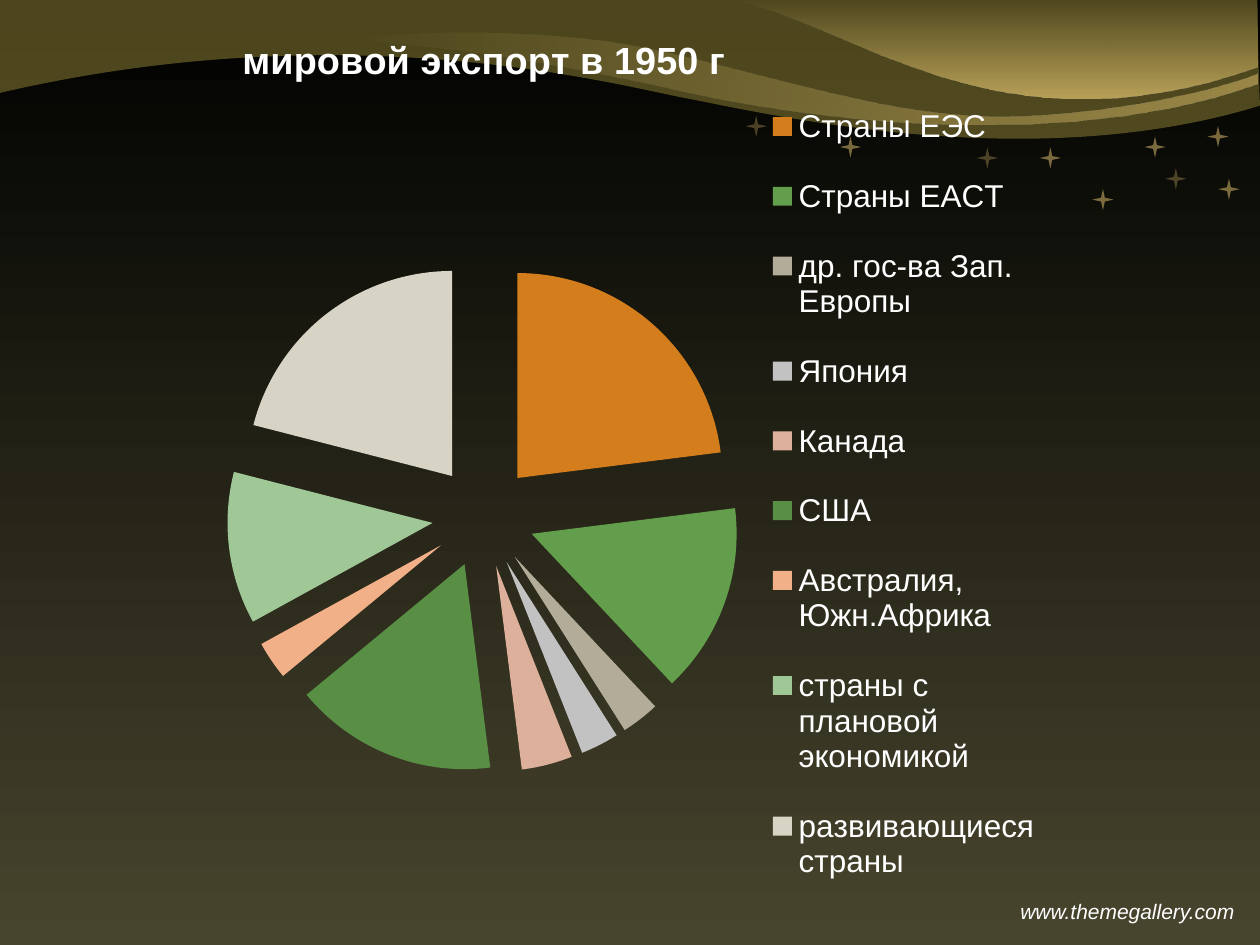
from lxml import etree
from pptx import Presentation
from pptx.chart.data import CategoryChartData
from pptx.dml.color import RGBColor
from pptx.enum.chart import XL_CHART_TYPE, XL_LEGEND_POSITION
from pptx.enum.shapes import MSO_SHAPE
from pptx.enum.text import MSO_AUTO_SIZE
from pptx.oxml.ns import qn
from pptx.util import Cm, Pt

PIE = XL_CHART_TYPE.PIE
RIGHT = XL_LEGEND_POSITION.RIGHT
STAR = MSO_SHAPE.STAR_4_POINT
GROW = MSO_AUTO_SIZE.SHAPE_TO_FIT_TEXT

GOLD = "E8C972"
WHITE = "FFFFFF"
FONT = "Arial"
TITLE = "мировой экспорт в 1950 г"
PARTS = [
    ("Страны ЕЭС", 23, "D37D1C"),
    ("Страны ЕАСТ", 15, "629E4C"),
    ("др. гос-ва Зап. Европы", 3, "B2AC98"),
    ("Япония", 3, "C2C2C2"),
    ("Канада", 4, "DCB09A"),
    ("США", 16, "588F44"),
    ("Австралия, Южн.Африка", 3, "F2B088"),
    ("страны с плановой экономикой", 12, "A0C796"),
    ("развивающиеся страны", 21, "D7D3C5"),
]
BAND = [
    (-0.03, 1.88),
    (6.83, 0.28), (12.09, 1.63), (13.72, 1.96),
    (15.34, 2.26), (20.7, 3.58), (25.4, 2.13),
    (25.4, 2.13), (25.35, 0.84), (25.35, -0.03),
    (12.62, -0.03), (-0.03, -0.05), (-0.03, -0.05),
    (-0.03, 0.64), (-0.03, 1.19), (-0.03, 1.88),
]
RIBBON = [
    (9.91, 1.09),
    (11.89, 1.42), (12.9, 1.63), (13.74, 1.83),
    (14.55, 2.01), (20.73, 3.35), (25.35, 1.68),
    (25.35, 1.68), (25.35, 1.73), (25.35, 1.47),
    (24.41, 1.85), (21.72, 2.44), (19.51, 2.31),
    (17.3, 2.21), (14.17, 1.07), (12.09, 0.81),
    (9.98, 0.56), (8.1, 0.64), (6.93, 0.79),
    (6.96, 0.81), (8.1, 0.84), (9.91, 1.09),
]
CORNER = [
    (25.35, -0.03),
    (25.35, 0.66), (25.35, 1.35), (25.35, 1.35),
    (20.02, 3.23), (17.22, 0.46), (14.66, -0.03),
    (14.66, -0.03), (20.02, -0.03), (25.35, -0.03),
]
STARS = [
    (6.99, 1.48, 50), (0, 0, 30), (8.46, 1.06, 30),
    (5.93, 0.64, 50), (1.9, 0.42, 50), (9.53, 1.27, 50),
    (9.31, 0.21, 50), (8.04, 0.42, 50), (4.66, 0.64, 30),
]


def tint(code):
    return RGBColor.from_string(code)


def shade(fill, first, last, angle):
    fill.gradient()
    fill.gradient_angle = angle
    for stop, code in zip(fill.gradient_stops, (first, last)):
        stop.color.rgb = tint(code)


def paint(fill, code):
    fill.solid()
    fill.fore_color.rgb = tint(code)


def fade(shape, *rates):
    shape.shadow.inherit = False
    shape.line.fill.background()
    for node, rate in zip(shape._element.spPr.iter(qn("a:srgbClr")), rates):
        etree.SubElement(node, qn("a:alpha"), val=str(rate * 1000))


def add_wave(slide, left, top, knots):
    spots = [(Cm(left + x), Cm(top + y)) for x, y in knots]
    pen = slide.shapes.build_freeform(*spots[0])
    pen.add_line_segments(spots[1:], close=True)
    wave = pen.convert_to_shape()
    lines = list(wave._element.spPr.iter(qn("a:lnTo")))
    for start in range(0, len(spots) - 1, 3):
        curve = etree.Element(qn("a:cubicBezTo"))
        lines[start].addprevious(curve)
        for line in lines[start:start + 3]:
            curve.append(line[0])
            line.getparent().remove(line)
    return wave


def draw_waves(slide, left, top):
    band = add_wave(slide, left, top, BAND)
    paint(band.fill, "988B3A")
    fade(band, 50)
    for knots, angle, rate in ((RIBBON, 0, 50), (CORNER, 270, 70)):
        wave = add_wave(slide, left, top, knots)
        shade(wave.fill, GOLD, GOLD, angle)
        fade(wave, 0, rate)


def draw_stars(slide, left, top, size):
    for x, y, rate in STARS:
        star = slide.shapes.add_shape(STAR, Cm(left + x), Cm(top + y), Cm(size), Cm(size))
        star.adjustments[0] = 0.125
        paint(star.fill, GOLD)
        fade(star, rate)


def set_font(font, size, bold=False):
    font.name = FONT
    font.size = Pt(size)
    font.bold = bold
    font.color.rgb = tint(WHITE)


def draw_site(slide, left, top, width, height):
    box = slide.shapes.add_textbox(Cm(left), Cm(top), Cm(width), Cm(height))
    frame = box.text_frame
    frame.word_wrap = False
    frame.auto_size = GROW
    frame.text = "www.themegallery.com"
    font = frame.paragraphs[0].font
    set_font(font, 12)
    font.italic = True


def place(node, index, inner=False, **sides):
    for old in node.findall(qn("c:layout")):
        node.remove(old)
    frame = etree.Element(qn("c:layout"))
    node.insert(index, frame)
    rules = etree.SubElement(frame, qn("c:manualLayout"))
    if inner:
        etree.SubElement(rules, qn("c:layoutTarget"), val="inner")
    for mode in ("xMode", "yMode"):
        etree.SubElement(rules, qn("c:" + mode), val="edge")
    for side, value in sides.items():
        etree.SubElement(rules, qn("c:" + side), val=str(value))


def draw_pie(slide, left, top, width, height):
    data = CategoryChartData()
    data.categories = [name for name, _, _ in PARTS]
    data.add_series(TITLE, [value for _, value, _ in PARTS])
    box = [Cm(side) for side in (left, top, width, height)]
    chart = slide.shapes.add_chart(PIE, *box, data).chart
    set_font(chart.font, 18)

    chart.has_title = True
    title = chart.chart_title
    title.text_frame.text = TITLE
    set_font(title.text_frame.paragraphs[0].font, 21.6, True)
    title.include_in_layout = False
    place(title._element, 1, x=0.03, y=0.01)

    chart.has_legend = True
    legend = chart.legend
    legend.position = RIGHT
    legend.include_in_layout = False
    set_font(legend.font, 18)
    place(legend._element, 1, x=0.66, y=0.06, w=0.33, h=0.93)

    plot = chart.plots[0]
    plot.vary_by_categories = True
    place(plot._element.getparent(), 0, True, x=0.02, y=0.26, w=0.61, h=0.58)
    series = plot.series[0]
    burst = etree.Element(qn("c:explosion"), val="25")
    series._element.find(qn("c:tx")).addnext(burst)
    for index, (_, _, code) in enumerate(PARTS):
        paint(series.points[index].format.fill, code)


def main():
    deck = Presentation()
    deck.slide_width, deck.slide_height = Cm(25.4), Cm(19.05)
    slide = deck.slides.add_slide(deck.slide_layouts[6])
    shade(slide.background.fill, "000000", "47452D", 270)
    draw_waves(slide, 0, 0)
    draw_site(slide, 20.32, 17.98, 4.88, 0.76)
    draw_stars(slide, 15.03, 2.33, 0.43)
    draw_pie(slide, 4.24, 0.41, 16.94, 18.19)
    deck.save("out.pptx")


if __name__ == "__main__":
    main()
